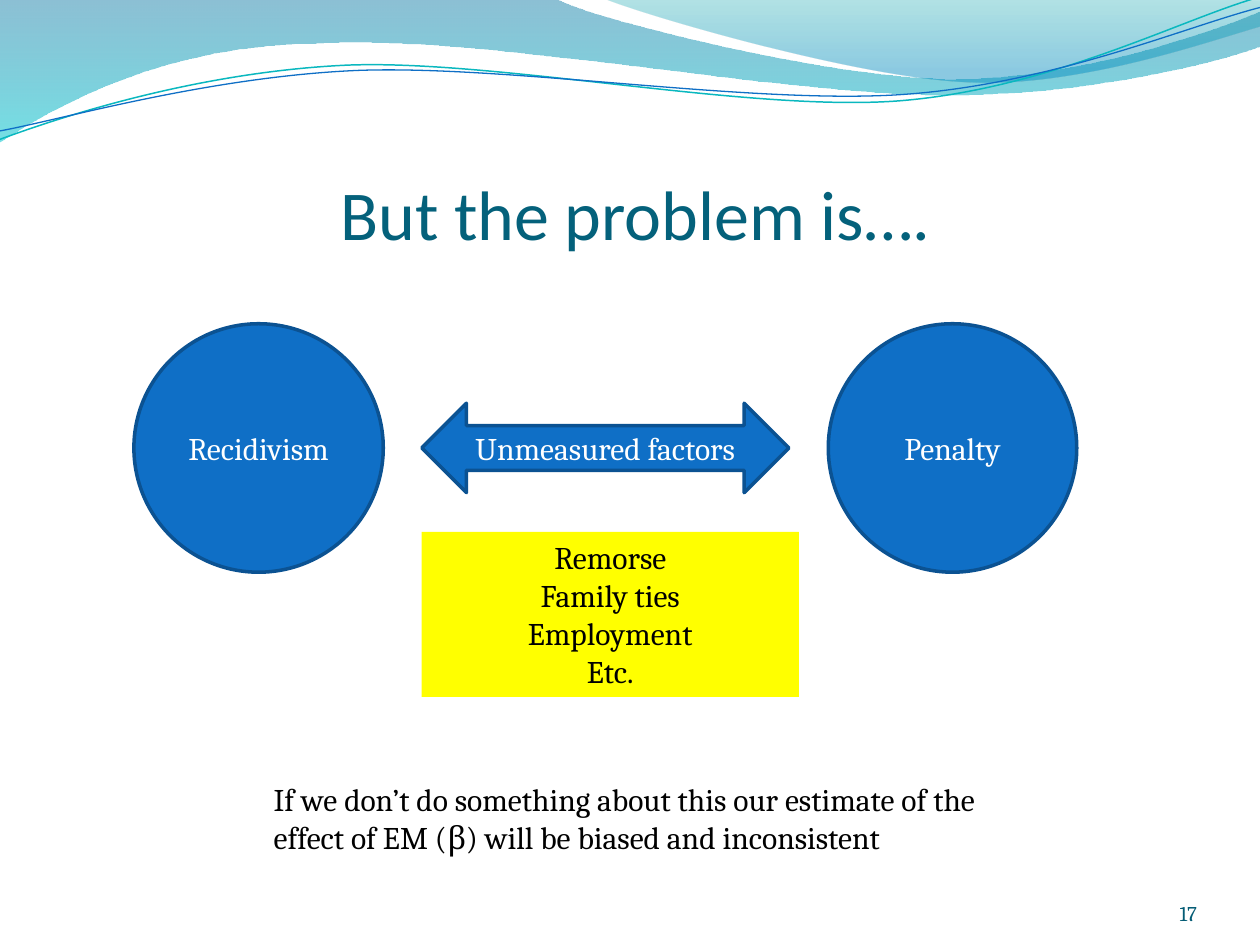
from lxml.etree import Element, SubElement
from pptx import Presentation
from pptx.dml.color import RGBColor
from pptx.enum.shapes import MSO_SHAPE
from pptx.enum.text import MSO_ANCHOR, PP_ALIGN
from pptx.oxml.ns import qn
from pptx.util import Pt

TITLE = "But the problem is…."
FACTORS = ["Remorse", "Family ties", "Employment", "Etc."]
CONCLUSION = ("If we don’t do something about this our estimate of the "
              "effect of EM (β) will be biased and inconsistent")
PAGE_NUMBER = "17"

BLUE, DARK_BLUE, YELLOW = "0F6FC6", "0B5292", "FFFF00"
DIAGRAM = [
    (MSO_SHAPE.OVAL, "Recidivism", (76.5, 185, 142.5, 142)),
    (MSO_SHAPE.LEFT_RIGHT_ARROW, "Unmeasured factors", (241, 230.4, 209.8, 51.1)),
    (MSO_SHAPE.OVAL, "Penalty", (473.3, 185, 142, 142)),
]

BANDS = [
    ((0, -1),
     [[(317, -1)],
      [(343, 12), (478, 45), (546, 45)],
      [(614, 45), (690, 19), (720, 6.5)],
      [(721, 26)],
      [(708, 32), (626, 55), (537, 54)],
      [(446, 54), (275, 20), (185, 24.5)],
      [(93, 25), (33, 60), (-1, 81.5)]],
     [(0, "0074A1", 45), (1, "00C6CF", 55)]),
    ((345, -1),
     [[(366, 8), (491, 45), (554, 47)],
      [(616, 50), (692, 23), (720, 15)],
      [(720, 0)]],
     [(0, "00A1A9", 30), (0.8, "008BBF", 45)]),
]
RIBBONS = [
    ((-1, 80),
     [[(34, 67), (113, 41), (199, 37.2)],
      [(284, 34), (427, 64), (513, 57.7)],
      [(600, 51), (675, 11), (719, -1.5)]],
     "0AB8BF", 0.85),
    ((-1, 75),
     [[(33, 69), (118, 44), (204, 40.3)],
      [(290, 37), (430, 60), (516, 54)],
      [(602, 48), (678, 15), (720, 4.3)]],
     BLUE, 0.75),
]


def color(value):
    return RGBColor.from_string(value)


def box(left, top, width, height):
    return Pt(left), Pt(top), Pt(width), Pt(height)


def write(shape, lines, size=18, font="Cambria", fill="000000", align=PP_ALIGN.CENTER,
          anchor=MSO_ANCHOR.MIDDLE, margins=(7.2, 3.6, 7.2, 3.6), level=0):
    frame = shape.text_frame
    frame.word_wrap = True
    frame.vertical_anchor = anchor
    (frame.margin_left, frame.margin_top,
     frame.margin_right, frame.margin_bottom) = map(Pt, margins)
    frame.text = "\n".join(lines)
    for paragraph in frame.paragraphs:
        paragraph.alignment = align
        paragraph.level = level
        for run in paragraph.runs:
            run.font.size = Pt(size)
            run.font.name = font
            run.font.color.rgb = color(fill)


def add_outline(slide, start, segments, close):
    points = [(round(x * 100), round(y * 100))
              for x, y in [start, *sum(segments, [])]]
    builder = slide.shapes.build_freeform(*points[0], scale=Pt(1) / 100)
    builder.add_line_segments(points[1:], close=close)
    shape = builder.convert_to_shape()
    shape.shadow.inherit = False
    lines = iter(list(shape.element.spPr.iter(qn("a:lnTo"))))
    for segment in segments:
        pieces = [next(lines) for point in segment]
        if len(pieces) == 3:
            curve = Element(qn("a:cubicBezTo"))
            pieces[0].addprevious(curve)
            for piece in pieces:
                curve.append(piece[0])
                piece.getparent().remove(piece)
    return shape


def add_band(slide, start, segments, stops):
    shape = add_outline(slide, start, segments, close=True)
    shape.line.fill.background()
    shape.fill.gradient()
    shape.fill.gradient_angle = 270
    for stop, (position, value, opacity) in zip(shape.fill.gradient_stops, stops):
        stop.position = position
        stop.color.rgb = color(value)
    tints = shape.element.spPr.iter(qn("a:srgbClr"))
    for tint, (position, value, opacity) in zip(list(tints), stops):
        SubElement(tint, qn("a:alpha")).set("val", str(opacity * 1000))


def add_ribbon(slide, start, segments, value, width):
    shape = add_outline(slide, start, segments, close=False)
    shape.fill.background()
    shape.line.color.rgb = color(value)
    shape.line.width = Pt(width)


def add_figure(slide, kind, bounds, fill, line=None):
    shape = slide.shapes.add_shape(kind, *box(*bounds))
    shape.shadow.inherit = False
    shape.fill.solid()
    shape.fill.fore_color.rgb = color(fill)
    if line:
        shape.line.color.rgb = color(line)
        shape.line.width = Pt(2)
    else:
        shape.line.fill.background()
    return shape


def main():
    presentation = Presentation()
    presentation.slide_width, presentation.slide_height = Pt(720), Pt(540)
    slide = presentation.slides.add_slide(presentation.slide_layouts[5])

    for band in BANDS:
        add_band(slide, *band)
    for ribbon in RIBBONS:
        add_ribbon(slide, *ribbon)

    title = slide.shapes.title
    title.left, title.top, title.width, title.height = box(36.2, 55.4, 653.8, 90)
    write(title, [TITLE], size=40, font="Calibri", fill="04617B",
          anchor=MSO_ANCHOR.BOTTOM, margins=(0, 3.6, 0, 0))
    title.element.getparent().append(title.element)

    number = slide.shapes.add_textbox(*box(624, 500.4, 60, 28.8))
    write(number, [PAGE_NUMBER], size=12, fill="045C75", align=PP_ALIGN.RIGHT,
          anchor=MSO_ANCHOR.BOTTOM, margins=(0, 0, 0, 0))

    for kind, label, bounds in DIAGRAM:
        write(add_figure(slide, kind, bounds, BLUE, DARK_BLUE), [label], fill="FFFFFF")

    factors = add_figure(slide, MSO_SHAPE.RECTANGLE, (241, 304, 215.5, 94.3), YELLOW)
    write(factors, FACTORS, anchor=MSO_ANCHOR.TOP)

    conclusion = slide.shapes.add_textbox(*box(113.3, 442, 471, 51))
    write(conclusion, [CONCLUSION], align=PP_ALIGN.LEFT, anchor=MSO_ANCHOR.TOP, level=1)

    presentation.save("out.pptx")


if __name__ == "__main__":
    main()
